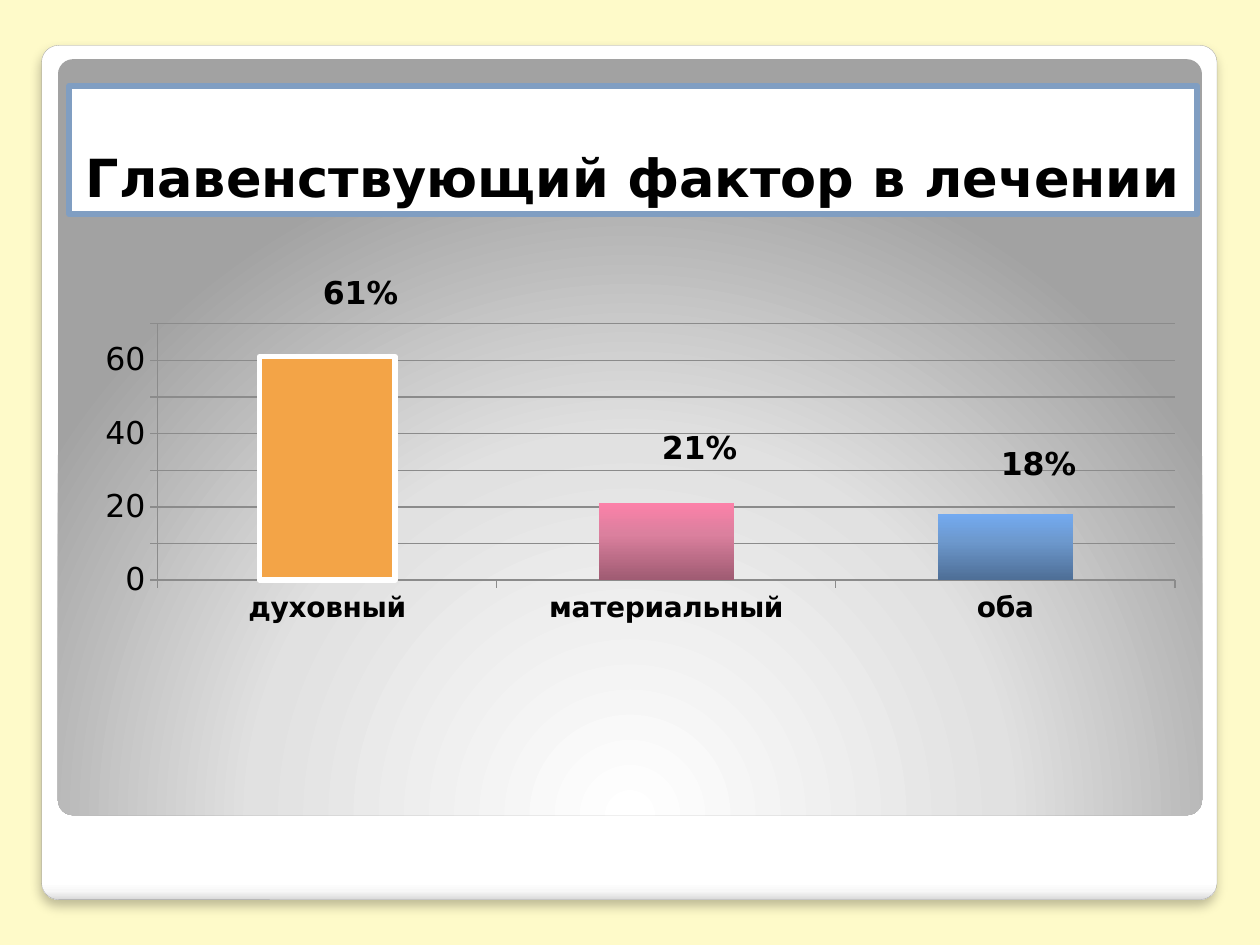
from lxml import etree
from pptx import Presentation
from pptx.chart.data import CategoryChartData
from pptx.dml.color import RGBColor
from pptx.enum.chart import XL_CHART_TYPE, XL_TICK_MARK
from pptx.enum.shapes import MSO_SHAPE
from pptx.enum.text import MSO_ANCHOR, MSO_AUTO_SIZE, PP_ALIGN
from pptx.oxml.ns import qn
from pptx.util import Inches, Pt

STACKED = XL_CHART_TYPE.COLUMN_STACKED
OUTSIDE = XL_TICK_MARK.OUTSIDE
ROUNDED = MSO_SHAPE.ROUNDED_RECTANGLE
BOTTOM = MSO_ANCHOR.BOTTOM
NO_FIT = MSO_AUTO_SIZE.NONE
CENTER = PP_ALIGN.CENTER

FONT = "DejaVu Sans"
BLACK, WHITE, GRID = "000000", "FFFFFF", "8B8B8B"
TITLE = "Главенствующий фактор в лечении"
FACTORS = [
    {"name": "духовный", "share": 61, "offset": (0.03, -0.32), "stops": None},
    {"name": "материальный", "share": 21, "offset": (0.03, -0.17),
     "stops": [(0, "9F5B72"), (60, "DB809E"), (100, "FC81A9")]},
    {"name": "оба", "share": 18, "offset": (0.03, -0.15),
     "stops": [(0, "4E6E96"), (60, "6D99CE"), (100, "73AAF1")]},
]
CARD_STOPS = [(0, WHITE), (98, WHITE), (99, "F7F7F7"), (100, "DADADA")]
PANEL_STOPS = [(0, WHITE), (55, "E1E1E1"), (100, "A2A2A2")]
CARD_BOX = (0.33, 0.36, 9.33, 6.78)
PANEL_BOX = (0.46, 0.47, 9.08, 6)
TITLE_BOX = (0.55, 0.68, 8.95, 1.02)
CHART_BOX = (0.55, 2.18, 8.78, 4.33)
PLOT_BOX = {"x": 0.08, "y": 0.09, "w": 0.92, "h": 0.47}


def rgb(value):
    """Turn a hex string into a colour."""
    return RGBColor.from_string(value)


def paint(fill, color):
    """Apply a solid colour."""
    fill.solid()
    fill.fore_color.rgb = rgb(color)


def outline(line, color, width):
    """Colour a line and set its width in points."""
    paint(line.fill, color)
    line.width = Pt(width)


def style_font(font, size=18, bold=False, color=BLACK):
    """Set the typeface, size, weight and colour."""
    font.name, font.size, font.bold = FONT, Pt(size), bold
    font.color.rgb = rgb(color)


def write(frame, text, align=CENTER, **font_format):
    """Put one formatted paragraph in a text frame."""
    paragraph = frame.paragraphs[0]
    paragraph.alignment = align
    run = paragraph.add_run()
    run.text = text
    style_font(run.font, **font_format)


def add_node(parent, tag, **attributes):
    """Append an XML child with the given attributes."""
    values = {key: str(value) for key, value in attributes.items()}
    return etree.SubElement(parent, qn(tag), values)


def blend(properties, stops, angle=None):
    """Swap a solid fill for a linear gradient, or a circular one without angle."""
    solid = properties.find(qn("a:solidFill"))
    gradient = etree.Element(qn("a:gradFill"), rotWithShape="1")
    stop_list = add_node(gradient, "a:gsLst")
    for position, color in stops:
        stop = add_node(stop_list, "a:gs", pos=position * 1000)
        add_node(stop, "a:srgbClr", val=color)
    if angle is None:
        circle = add_node(gradient, "a:path", path="circle")
        add_node(circle, "a:fillToRect", l=50000, t=175000, r=50000, b=-75000)
    else:
        add_node(gradient, "a:lin", ang=angle * 60000, scaled=0)
    properties.replace(solid, gradient)


def place(shape, box):
    """Move and size a shape."""
    shape.left, shape.top, shape.width, shape.height = map(Inches, box)


def add_panel(slide, box, stops, angle=None):
    """Add a rounded panel with a gradient and no line."""
    panel = slide.shapes.add_shape(ROUNDED, *map(Inches, box))
    panel.adjustments[0] = 0.02
    panel.shadow.inherit = False
    panel.line.fill.background()
    paint(panel.fill, WHITE)
    blend(panel.element.spPr, stops, angle)
    return panel


def add_background(slide):
    """Draw the page colour, the card and the grey panel."""
    paint(slide.background.fill, "FEFAC9")
    card = add_panel(slide, CARD_BOX, CARD_STOPS, 90)
    outline(card.line, "A4A4A4", 0.16)
    effects = card.element.spPr.find(qn("a:effectLst"))
    shadow = add_node(effects, "a:outerShdw", blurRad=Pt(6), dist=Pt(4),
                      dir=90 * 60000, algn="t", rotWithShape=0)
    shade = add_node(shadow, "a:srgbClr", val=BLACK)
    add_node(shade, "a:alpha", val=25000)
    add_panel(slide, PANEL_BOX, PANEL_STOPS)


def add_title(slide):
    """Fill the title placeholder and bring it in front of the panel."""
    title = slide.shapes.title
    place(title, TITLE_BOX)
    paint(title.fill, WHITE)
    outline(title.line, "809EC2", 3.35)
    frame = title.text_frame
    frame.word_wrap, frame.auto_size = True, NO_FIT
    frame.vertical_anchor = BOTTOM
    write(frame, TITLE, size=30, bold=True)
    slide.shapes.element.append(title.element)


def set_layout(parent, index, positions, inner=False):
    """Insert a manual chart layout."""
    for old in parent.findall(qn("c:layout")):
        parent.remove(old)
    layout = etree.Element(qn("c:layout"))
    manual = add_node(layout, "c:manualLayout")
    if inner:
        add_node(manual, "c:layoutTarget", val="inner")
        add_node(manual, "c:xMode", val="edge")
        add_node(manual, "c:yMode", val="edge")
    for key, value in positions.items():
        add_node(manual, f"c:{key}", val=value)
    parent.insert(index, layout)


def style_axes(chart):
    """Format both axes and the gridlines."""
    for axis, size, bold in ((chart.category_axis, 16, True),
                             (chart.value_axis, 18, False)):
        axis.major_tick_mark = OUTSIDE
        style_font(axis.tick_labels.font, size, bold)
        outline(axis.format.line, GRID, 0.75)
    scale = chart.value_axis
    scale.minimum_scale, scale.maximum_scale, scale.major_unit = 0, 70, 10
    scale.has_major_gridlines = True
    outline(scale.major_gridlines.format.line, GRID, 0.75)


def hide_leader_lines(chart):
    """Turn off the lines that join moved labels to their columns."""
    for leader in chart.element.findall(".//" + qn("c:showLeaderLines")):
        leader.set("val", "0")


def add_factor_chart(slide):
    """Add the column chart with its shifted labels."""
    data = CategoryChartData()
    data.categories = [factor["name"] for factor in FACTORS]
    data.add_series("Series 1", [factor["share"] for factor in FACTORS])
    chart = slide.shapes.add_chart(STACKED, *map(Inches, CHART_BOX), data).chart
    chart.has_legend = chart.has_title = False
    style_font(chart.font)
    style_axes(chart)
    set_layout(chart.element.find(".//" + qn("c:plotArea")), 0, PLOT_BOX, True)
    plot = chart.plots[0]
    plot.gap_width, plot.overlap, plot.vary_by_categories = 150, 100, False
    series = plot.series[0]
    paint(series.format.fill, "F3A447")
    outline(series.format.line, WHITE, 3)
    for index, factor in enumerate(FACTORS):
        point = series.points[index]
        write(point.data_label.text_frame, f"{factor['share']}%", bold=True)
        label = chart.element.findall(".//" + qn("c:dLbl"))[index]
        set_layout(label, 1, dict(zip("xy", factor["offset"])))
        if factor["stops"]:
            paint(point.format.fill, WHITE)
            point.format.line.fill.background()
            column = chart.element.findall(".//" + qn("c:dPt"))[-1]
            blend(column.find(qn("c:spPr")), factor["stops"], 270)
    hide_leader_lines(chart)


def main():
    """Build and save the slide."""
    deck = Presentation()
    deck.slide_width, deck.slide_height = Inches(10), Inches(7.5)
    slide = deck.slides.add_slide(deck.slide_layouts[5])
    add_background(slide)
    add_title(slide)
    add_factor_chart(slide)
    deck.save("out.pptx")


if __name__ == "__main__":
    main()
